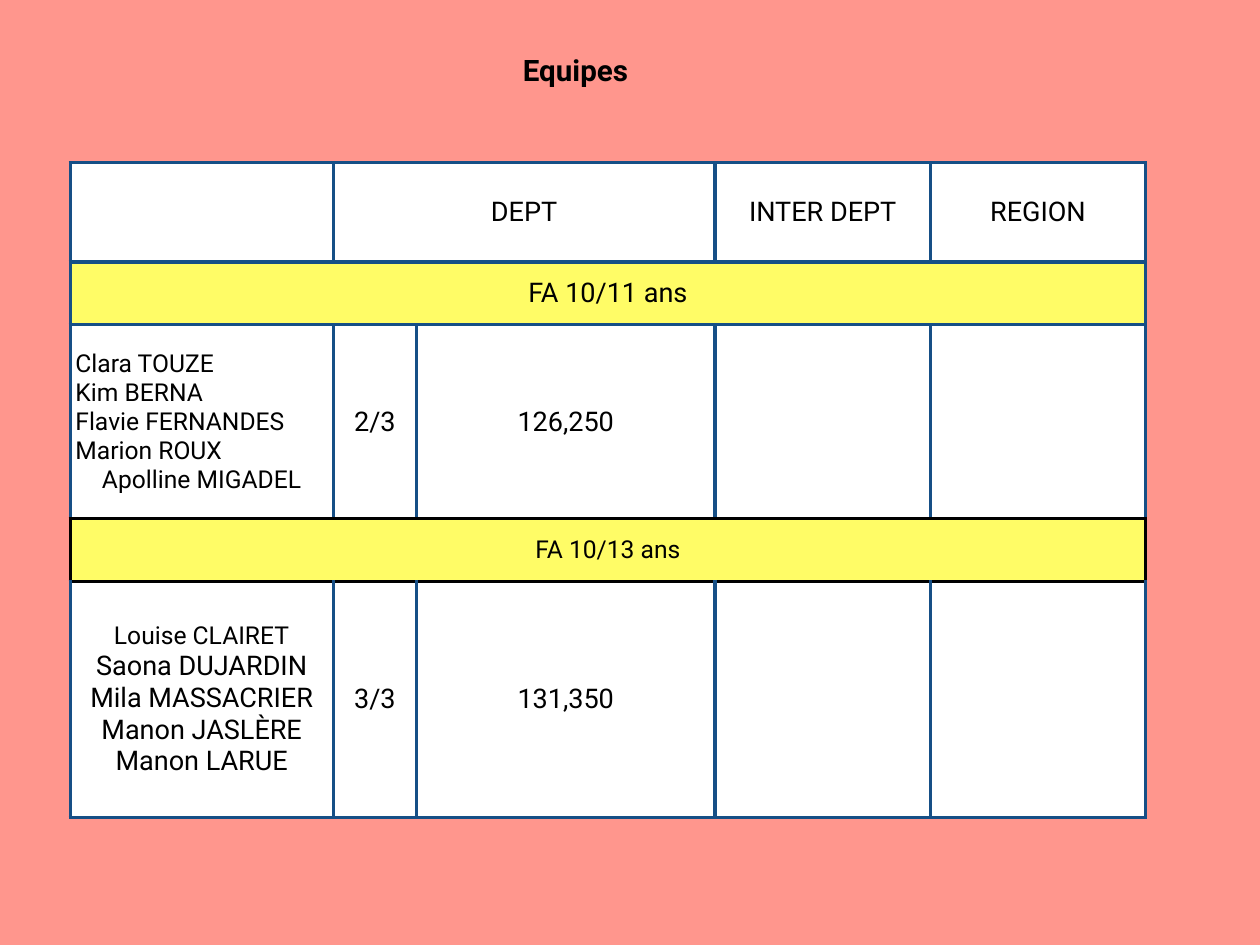
from lxml.etree import SubElement
from pptx import Presentation
from pptx.dml.color import RGBColor
from pptx.enum.text import MSO_ANCHOR, MSO_AUTO_SIZE, PP_ALIGN
from pptx.oxml.ns import qn
from pptx.util import Pt

# Content: each cell is a list of (text, size, alignment) paragraphs
LEFT, CENTER = PP_ALIGN.LEFT, PP_ALIGN.CENTER
TITLE = "Equipes"
TEAM_10_11 = [(name, 20, LEFT) for name in
              ("Clara TOUZE", "Kim BERNA", "Flavie FERNANDES", "Marion ROUX")]
TEAM_10_11.append(("Apolline MIGADEL", 20, CENTER))
TEAM_10_13 = [("Louise CLAIRET", 20, CENTER)]
TEAM_10_13 += [(name, 22, CENTER) for name in
               ("Saona DUJARDIN", "Mila MASSACRIER", "Manon JASLÈRE", "Manon LARUE")]


def one(text, size=22):
    return [(text, size, CENTER)]


ROWS = [
    [[], one("DEPT"), [], one("INTER DEPT"), one("REGION")],
    [one("FA 10/11 ans"), [], [], [], []],
    [TEAM_10_11, one("2/3"), one("126,250"), [], []],
    [one("FA 10/13 ans", 20), [], [], [], []],
    [TEAM_10_13, one("3/3"), one("131,350"), [], []],
]
COL_WIDTHS = [213.8, 67.7, 242.6, 175, 175]
ROW_HEIGHTS = [80.6, 51.1, 157.7, 51.1, 191.5]
MERGES = [((0, 1), (0, 2)), ((1, 0), (1, 4)), ((3, 0), (3, 4))]
CATEGORY_ROWS = (1, 3)
BLACK_ROW = 3  # category row outlined in black

FONT, INSET = "Roboto", 4.3
CORAL, YELLOW, WHITE, BLUE, BLACK = "FF968D", "FFFC66", "FFFFFF", "164F86", "000000"


def rgb(color):
    return RGBColor.from_string(color)


def set_insets(obj):
    obj.margin_left = obj.margin_right = obj.margin_top = obj.margin_bottom = Pt(INSET)
    obj.vertical_anchor = MSO_ANCHOR.MIDDLE


def format_paragraph(p, text, size, align, bold=False):
    p.text = text
    p.alignment = align
    p.font.name, p.font.size, p.font.bold = FONT, Pt(size), bold
    p.font.color.rgb = rgb(BLACK)


def set_border(cell, side, color):
    ln = SubElement(cell._tc.get_or_add_tcPr(), qn(f"a:ln{side}"), w=str(Pt(3)))
    SubElement(SubElement(ln, qn("a:solidFill")), qn("a:srgbClr"), val=color)


def border_color(row, side):
    touching = {row, row + {"T": -1, "B": 1}.get(side, 0)}
    return BLACK if BLACK_ROW in touching else BLUE


prs = Presentation()
prs.slide_width, prs.slide_height = Pt(1024), Pt(768)
s = prs.slides.add_slide(prs.slide_layouts[5])
s.background.fill.solid()
s.background.fill.fore_color.rgb = rgb(CORAL)

# Title
title = s.shapes.title
title.left, title.top, title.width, title.height = Pt(413.7), Pt(39), Pt(108), Pt(36)
tf = title.text_frame
tf.word_wrap = False
tf.auto_size = MSO_AUTO_SIZE.NONE
set_insets(tf)
format_paragraph(tf.paragraphs[0], TITLE, 24, CENTER, bold=True)

# Results table
table = s.shapes.add_table(len(ROWS), len(COL_WIDTHS), Pt(57), Pt(132.3),
                           Pt(sum(COL_WIDTHS)), Pt(sum(ROW_HEIGHTS))).table
table.first_row = table.horz_banding = False
for col, width in zip(table.columns, COL_WIDTHS):
    col.width = Pt(width)
for row, height in zip(table.rows, ROW_HEIGHTS):
    row.height = Pt(height)

for i, row in enumerate(ROWS):
    for j, paragraphs in enumerate(row):
        cell = table.cell(i, j)
        set_insets(cell)
        for side in "LRTB":
            set_border(cell, side, border_color(i, side))
        cell.fill.solid()
        cell.fill.fore_color.rgb = rgb(YELLOW if i in CATEGORY_ROWS else WHITE)
        tf = cell.text_frame
        for n, (text, size, align) in enumerate(paragraphs):
            p = tf.add_paragraph() if n else tf.paragraphs[0]
            format_paragraph(p, text, size, align)

for first, last in MERGES:
    table.cell(*first).merge(table.cell(*last))

prs.save("out.pptx")
